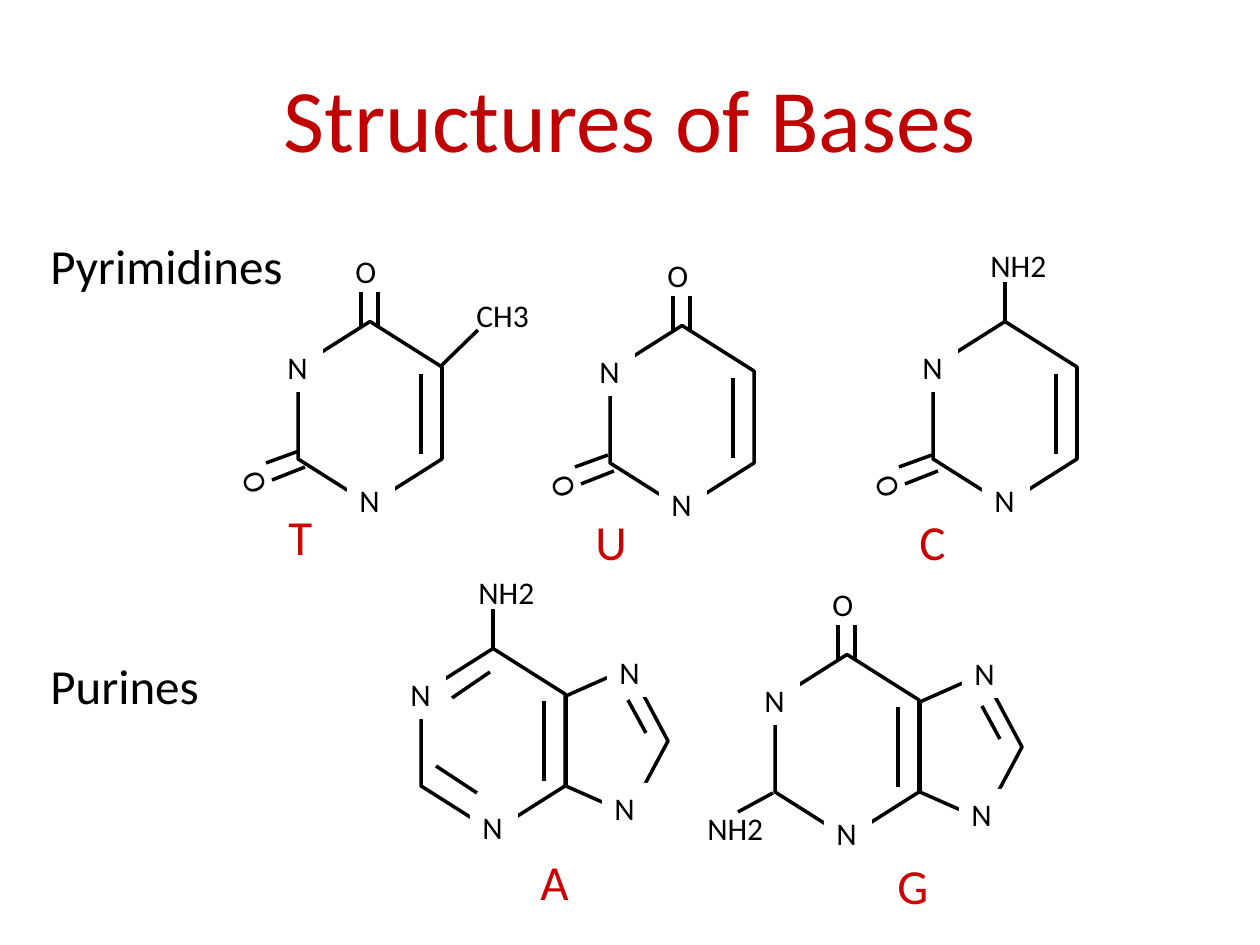
import pptx
import pptx.util
import pptx.dml.color
import pptx.enum.shapes
import pptx.enum.text
import pptx.oxml.ns
import lxml.etree

PX = 914400 / 126
BLACK, RED, TITLE_RED, WHITE = "000000", "CC0000", "C00000", "FFFFFF"
FONT = "Calibri"

HEADINGS = [("Pyrimidines", 38, 229, 280), ("Purines", 38, 649, 192)]

RING_NITROGENS = [(-95, -71), (-23, 62)]
RING_BOND = (51, -39, 51, 41)
PENTAGON_BOND = (135, -40, 153, -7)

GROUPS = {
    "top O": {"bonds": [(-9, -87, -9, -121), (8, -87, 8, -121)],
              "label": ("O", -27, -167, 50, 0)},
    "low O": {"bonds": [(-65, 54, -98, 67), (-71, 38, -104, 50)],
              "label": ("O", -144, 43, 50, 248.3)},
    "top NH2": {"bonds": [(0, -91, 0, -131)],
                "label": ("NH2", -27, -173, 88, 0)},
    "low NH2": {"bonds": [(-74, 47, -109, 66)],
                "label": ("NH2", -152, 57, 88, 0)},
    "CH3": {"bonds": [(71, -47, 108, -83)],
            "label": ("CH3", 94, -123, 88, 0)},
}

BASES = [
    {"letter": ("T", -94, 87, 55), "center": (370, 413),
     "groups": [("top O", 0, 0), ("low O", 0, 0), ("CH3", 0, 0)]},
    {"letter": ("U", -99, 88, 60), "center": (682, 417),
     "groups": [("top O", 0, 0), ("low O", -3, 0)]},
    {"letter": ("C", -98, 92, 60), "center": (1005, 413),
     "groups": [("top NH2", 0, 0), ("low O", -2, 4)]},
    {"letter": ("A", 35, 105, 58), "center": (493, 740),
     "groups": [("top NH2", 0, 0)],
     "pentagon_nitrogens": [(109, 43), (114, -93)],
     "extra_bonds": [(-41, -42, -3, -68), (-57, 26, -16, 53)]},
    {"letter": ("G", 38, 103, 63), "center": (847, 746),
     "groups": [("top O", 0, 0), ("low NH2", 0, 0)],
     "pentagon_nitrogens": [(112, 43), (115, -98)]},
]


def emu(*lengths):
    return [round(length * PX) for length in lengths]


def color(value):
    return pptx.dml.color.RGBColor.from_string(value)


def add_text(slide, text, left, top, width, height, size, ink=BLACK, fill=None, turn=0):
    box = slide.shapes.add_textbox(*emu(left, top, width, height))
    box.rotation = turn
    if fill:
        box.fill.solid()
        box.fill.fore_color.rgb = color(fill)
    frame = box.text_frame
    frame.text = text
    frame.word_wrap = False
    frame.auto_size = pptx.enum.text.MSO_AUTO_SIZE.SHAPE_TO_FIT_TEXT
    font = frame.paragraphs[0].runs[0].font
    font.name = FONT
    font.size = pptx.util.Pt(size)
    font.color.rgb = color(ink)
    return box


def add_title(slide, text):
    title = add_text(slide, text, 63, 38, 1134, 158, 51, TITLE_RED)
    frame = title.text_frame
    frame.word_wrap = True
    frame.auto_size = pptx.enum.text.MSO_AUTO_SIZE.NONE
    frame.vertical_anchor = pptx.enum.text.MSO_ANCHOR.MIDDLE
    frame.paragraphs[0].alignment = pptx.enum.text.PP_ALIGN.CENTER


def set_line(item):
    item.line.color.rgb = color(BLACK)
    item.line.width = pptx.util.Pt(2)


def add_ring(slide, kind, x, y, width, height):
    ring = slide.shapes.add_shape(kind, *emu(x - width / 2, y - height / 2, width, height))
    ring.rotation = 90
    ring.shadow.inherit = False
    ring.fill.background()
    set_line(ring)
    return ring


def add_bond(slide, x, y, bond):
    x1, y1, x2, y2 = bond
    line = slide.shapes.add_connector(
        pptx.enum.shapes.MSO_CONNECTOR.STRAIGHT, *emu(x + x1, y + y1, x + x2, y + y2))
    set_line(line)
    lxml.etree.SubElement(line._element.spPr, pptx.oxml.ns.qn("a:effectLst"))


def add_base(slide, base):
    x, y = base["center"]
    kinds = pptx.enum.shapes.MSO_SHAPE
    hexagon = add_ring(slide, kinds.HEXAGON, x, y, 183, 144)
    hexagon.adjustments[0] = 0.316
    pentagon_nitrogens = base.get("pentagon_nitrogens", [])
    bonds = [RING_BOND] + base.get("extra_bonds", [])
    if pentagon_nitrogens:
        add_ring(slide, kinds.REGULAR_PENTAGON, x + 124, y + 1, 146, 102)
        bonds.append(PENTAGON_BOND)

    for dx, dy in RING_NITROGENS + pentagon_nitrogens:
        add_text(slide, "N", x + dx, y + dy, 48, 50, 18, fill=WHITE)
    for bond in bonds:
        add_bond(slide, x, y, bond)

    for name, dx, dy in base["groups"]:
        group = GROUPS[name]
        for bond in group["bonds"]:
            add_bond(slide, x + dx, y + dy, bond)
        text, left, top, width, turn = group["label"]
        add_text(slide, text, x + dx + left, y + dy + top, width, 50, 18, turn=turn)

    letter, left, top, width = base["letter"]
    add_text(slide, letter, x + left, y + top, width, 72, 28, RED)


def main():
    deck = pptx.Presentation()
    deck.slide_width, deck.slide_height = emu(1260, 945)
    slide = deck.slides.add_slide(deck.slide_layouts[6])
    add_title(slide, "Structures of Bases")
    for text, left, top, width in HEADINGS:
        add_text(slide, text, left, top, width, 72, 28)
    for base in BASES:
        add_base(slide, base)
    deck.save("out.pptx")


if __name__ == "__main__":
    main()
